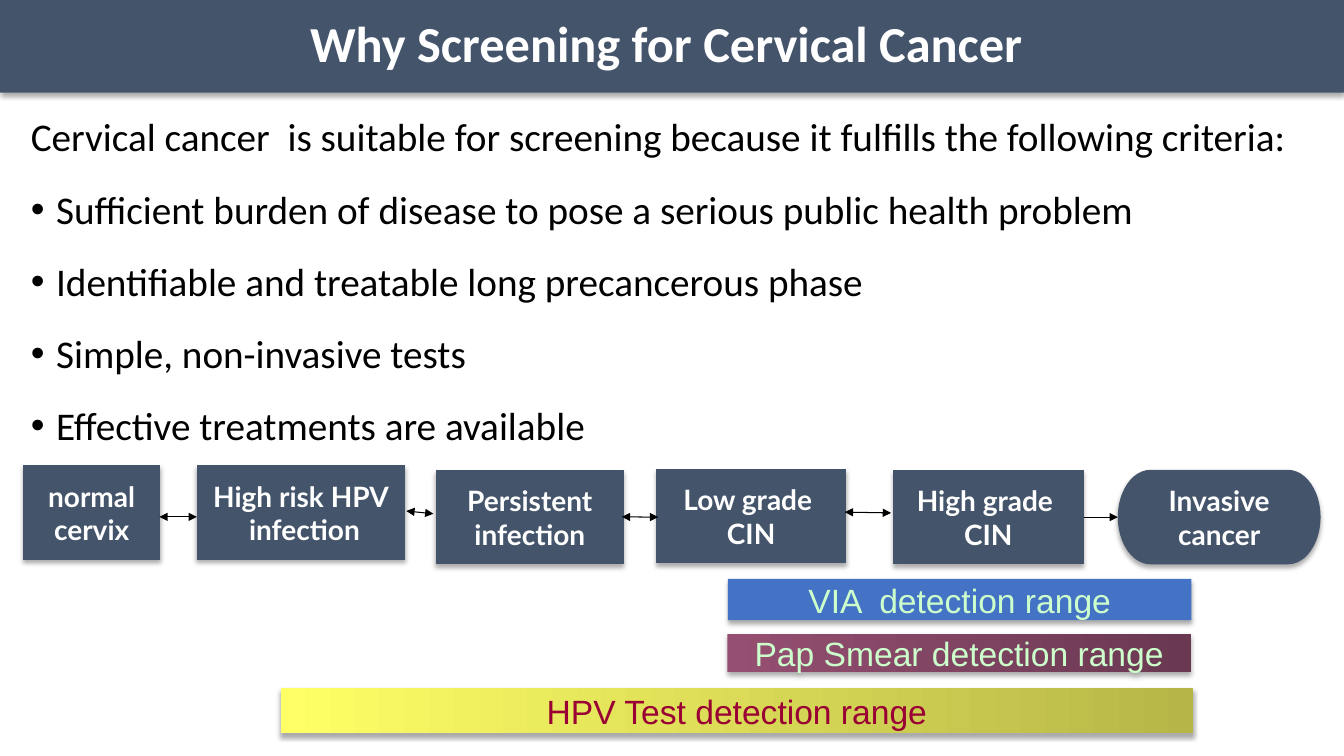
"""Build the slide on why cervical cancer is suitable for screening."""
from lxml import etree
from pptx import Presentation
from pptx.dml.color import RGBColor
from pptx.enum.shapes import MSO_CONNECTOR, MSO_SHAPE
from pptx.enum.text import MSO_ANCHOR, PP_ALIGN
from pptx.oxml import parse_xml
from pptx.util import Pt

RECTANGLE = MSO_SHAPE.RECTANGLE
PROCESS = MSO_SHAPE.FLOWCHART_PROCESS
TERMINATOR = MSO_SHAPE.FLOWCHART_TERMINATOR
STRAIGHT = MSO_CONNECTOR.STRAIGHT
CENTER, LEFT = PP_ALIGN.CENTER, PP_ALIGN.LEFT
MIDDLE = MSO_ANCHOR.MIDDLE
DRAWING = "http://schemas.openxmlformats.org/drawingml/2006/main"
TAG = "{" + DRAWING + "}"
SHADOW = (
    f'<a:effectLst xmlns:a="{DRAWING}"><a:outerShdw blurRad="44450" dist="27940" '
    'dir="5400000" algn="ctr" rotWithShape="0"><a:srgbClr val="000000">'
    '<a:alpha val="32000"/></a:srgbClr></a:outerShdw></a:effectLst>'
)
SLATE, WHITE, BLACK, MINT = "44546A", "FFFFFF", "000000", "CCFFCC"


def color(value):
    return RGBColor.from_string(value)


def add_panel(kind, place, fill, lines, style, wrap=False):
    box = page.shapes.add_shape(kind, *[Pt(length) for length in place])
    box.fill.solid()
    box.fill.fore_color.rgb = color(fill)
    box.line.fill.background()
    box._element.spPr.append(parse_xml(SHADOW))
    frame = box.text_frame
    frame.word_wrap = wrap
    frame.vertical_anchor = MIDDLE
    for index, line in enumerate(lines):
        para = frame.paragraphs[0] if index == 0 else frame.add_paragraph()
        para.alignment = CENTER
        span = para.add_run()
        span.text = line
        span.font.color.rgb = color(style["color"])
        for name, value in style["font"].items():
            setattr(span.font, name, value)
    return box


deck = Presentation()
deck.slide_width, deck.slide_height = Pt(960), Pt(540)
page = deck.slides.add_slide(deck.slide_layouts[6])

title_style = {"color": WHITE, "font": {"name": "Calibri", "size": Pt(36), "bold": True}}
title = add_panel(RECTANGLE, (0, 0, 960, 66.2), SLATE,
                  ["Why Screening for Cervical Cancer "], title_style, wrap=True)
title.text_frame.paragraphs[0].line_spacing = 0.9

criteria = [
    "Cervical cancer  is suitable for screening because it fulfills the following criteria:",
    "Sufficient burden of disease to pose a serious public health problem",
    "Identifiable and treatable long precancerous phase",
    "Simple, non-invasive tests",
    "Effective treatments are available",
]
body = page.shapes.add_textbox(Pt(15), Pt(77), Pt(929.5), Pt(448))
body.text_frame.word_wrap = True
para_format = {"alignment": LEFT, "space_before": Pt(12), "space_after": Pt(6)}
for index, criterion in enumerate(criteria):
    para = body.text_frame.paragraphs[0] if index == 0 else body.text_frame.add_paragraph()
    for name, value in para_format.items():
        setattr(para, name, value)
    span = para.add_run()
    span.text = criterion
    span.font.name, span.font.size = "Calibri", Pt(28)
    span.font.color.rgb = color(BLACK)
    if index > 0:
        settings = para._p.get_or_add_pPr()
        settings.set("marL", str(Pt(18)))
        settings.set("indent", str(-Pt(18)))
        etree.SubElement(settings, TAG + "buFont", typeface="Arial")
        etree.SubElement(settings, TAG + "buChar", char="•")

stage_style = {"color": WHITE, "font": {"name": "Lato", "size": Pt(20), "bold": True}}
stages = [
    (PROCESS, 16.5, 332.4, 98, ["normal", "cervix"]),
    (PROCESS, 140.6, 332.4, 149, ["High risk HPV", " infection"]),
    (PROCESS, 311.2, 335.6, 134.6, ["Persistent", "infection"]),
    (PROCESS, 468.6, 335, 136, ["Low grade ", "CIN"]),
    (PROCESS, 638, 335.6, 136, ["High grade ", "CIN"]),
    (TERMINATOR, 798.5, 335.6, 144.8, ["Invasive", "cancer"]),
]
for kind, left, top, width, lines in stages:
    add_panel(kind, (left, top, width, 67.5), SLATE, lines, stage_style)

both_ends, tail_only = ("headEnd", "tailEnd"), ("tailEnd",)
arrows = [
    (113.8, 369.2, 140.6, 369.2, both_ends),
    (290.2, 365, 309.6, 367, both_ends),
    (444.2, 369.2, 470.2, 369.4, both_ends),
    (603.4, 365.8, 636.5, 366.4, both_ends),
    (774, 369.4, 798.5, 369.4, tail_only),
]
for *ends, heads in arrows:
    arrow = page.shapes.add_connector(STRAIGHT, *[Pt(length) for length in ends])
    arrow.line.width = Pt(0.75)
    arrow.line.color.rgb = color(BLACK)
    outline = arrow.line._get_or_add_ln()
    for head in heads:
        etree.SubElement(outline, TAG + head, type="triangle")
    etree.SubElement(arrow._element.spPr, TAG + "effectLst")

ranges = [
    ("VIA  detection range", (520, 413.5, 331, 29.5), "4472C4", MINT, False),
    ("Pap Smear detection range", (519.6, 452.9, 331, 27.3), "954F72", MINT, True),
    ("HPV Test detection range", (200.5, 491.5, 651.6, 32.4), "FFFF66", "990033", True),
]
for label, place, fill, ink, shaded in ranges:
    style = {"color": ink, "font": {"name": "Arial", "size": Pt(24)}}
    bar = add_panel(RECTANGLE, place, fill, [label], style)
    if shaded:
        bar.fill.gradient()
        bar.fill.gradient_angle = 0
        for stop in bar.fill.gradient_stops:
            stop.color.rgb = color(fill)
        last_color = bar._element.spPr.findall(f".//{TAG}gs/{TAG}srgbClr")[-1]
        etree.SubElement(last_color, TAG + "shade", val="46275")

deck.save("out.pptx")
